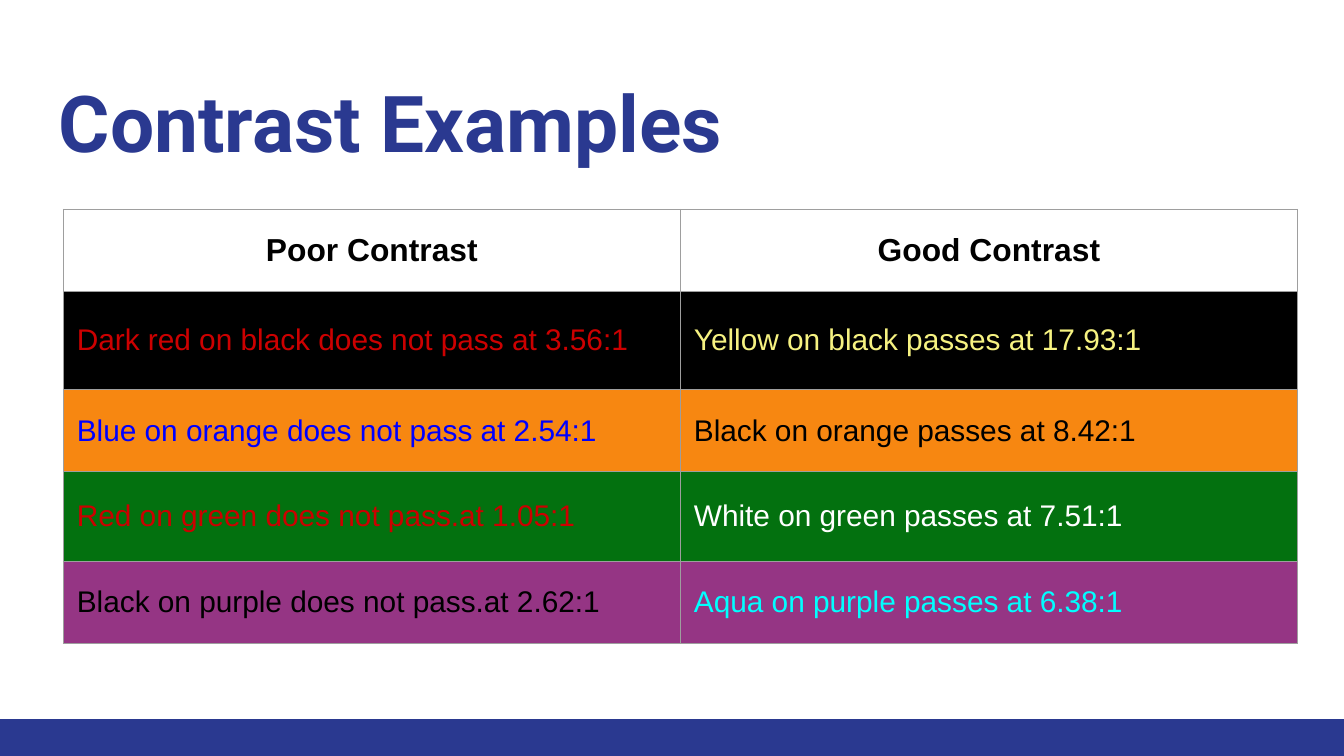
from lxml import etree
from pptx import Presentation
from pptx.dml.color import RGBColor
from pptx.enum.shapes import MSO_SHAPE
from pptx.enum.text import MSO_ANCHOR, PP_ALIGN
from pptx.oxml.ns import qn
from pptx.util import Pt

RECT = MSO_SHAPE.RECTANGLE
TOP, MIDDLE = MSO_ANCHOR.TOP, MSO_ANCHOR.MIDDLE
LEFT, CENTER = PP_ALIGN.LEFT, PP_ALIGN.CENTER

COLORS = {
    "navy": "2A3990", "border": "9E9E9E", "white": "FFFFFF",
    "black": "000000", "red": "CC0000", "yellow": "F6F281",
    "blue": "0000FF", "orange": "F78711", "green": "03710F",
    "purple": "953584", "aqua": "00FFFF",
}
ROWS = [
    (44, "white", ("Poor Contrast", "black"), ("Good Contrast", "black")),
    (52.6, "black", ("Dark red on black does not pass at 3.56:1", "red"),
     ("Yellow on black passes at 17.93:1", "yellow")),
    (44, "orange", ("Blue on orange does not pass at 2.54:1", "blue"),
     ("Black on orange passes at 8.42:1", "black")),
    (48, "green", ("Red on green does not pass.at 1.05:1", "red"),
     ("White on green passes at 7.51:1", "white")),
    (44, "purple", ("Black on purple does not pass.at 2.62:1", "black"),
     ("Aqua on purple passes at 6.38:1", "aqua")),
]
W, H = 720, 405
INSET = Pt(7.2)
COL_W = 330.6


def add_run(p, text, font, size, color, bold):
    r = p.add_run()
    r.text = text
    r.font.name = font
    r.font.size = Pt(size)
    r.font.bold = bold
    r.font.color.rgb = RGBColor.from_string(COLORS[color])


def add_borders(cell):
    tc_pr = cell._tc.get_or_add_tcPr()
    for i, side in enumerate(("lnL", "lnR", "lnT", "lnB")):
        ln = etree.Element(qn(f"a:{side}"), w=str(Pt(0.75)))
        fill = etree.SubElement(ln, qn("a:solidFill"))
        etree.SubElement(fill, qn("a:srgbClr"), val=COLORS["border"])
        tc_pr.insert(i, ln)


prs = Presentation()
prs.slide_width, prs.slide_height = Pt(W), Pt(H)
s = prs.slides.add_slide(prs.slide_layouts[6])

bar = s.shapes.add_shape(RECT, 0, Pt(385.2), Pt(W), Pt(H - 385.2))
bar.shadow.inherit = False
bar.fill.solid()
bar.fill.fore_color.rgb = RGBColor.from_string(COLORS["navy"])
bar.line.fill.background()

title = s.shapes.add_textbox(Pt(24.5), Pt(32.4), Pt(671), Pt(47.5))
tf = title.text_frame
tf.word_wrap = True
tf.vertical_anchor = TOP
tf.margin_left = tf.margin_right = tf.margin_top = tf.margin_bottom = INSET
add_run(tf.paragraphs[0], "Contrast Examples", "Roboto", 42, "navy", True)

height = sum(row[0] for row in ROWS)
frame = s.shapes.add_table(len(ROWS), 2, Pt(34), Pt(112.2), Pt(2 * COL_W), Pt(height))
table = frame.table
for col in table.columns:
    col.width = Pt(COL_W)

for i, (row_h, fill, *entries) in enumerate(ROWS):
    table.rows[i].height = Pt(row_h)
    header = i == 0
    for j, (text, color) in enumerate(entries):
        cell = table.cell(i, j)
        cell.fill.solid()
        cell.fill.fore_color.rgb = RGBColor.from_string(COLORS[fill])
        cell.vertical_anchor = MIDDLE
        cell.margin_left = cell.margin_right = INSET
        cell.margin_top = cell.margin_bottom = INSET
        p = cell.text_frame.paragraphs[0]
        p.alignment = CENTER if header else LEFT
        add_run(p, text, "Arial", 17 if header else 16, color, header)
        add_borders(cell)

prs.save("out.pptx")
